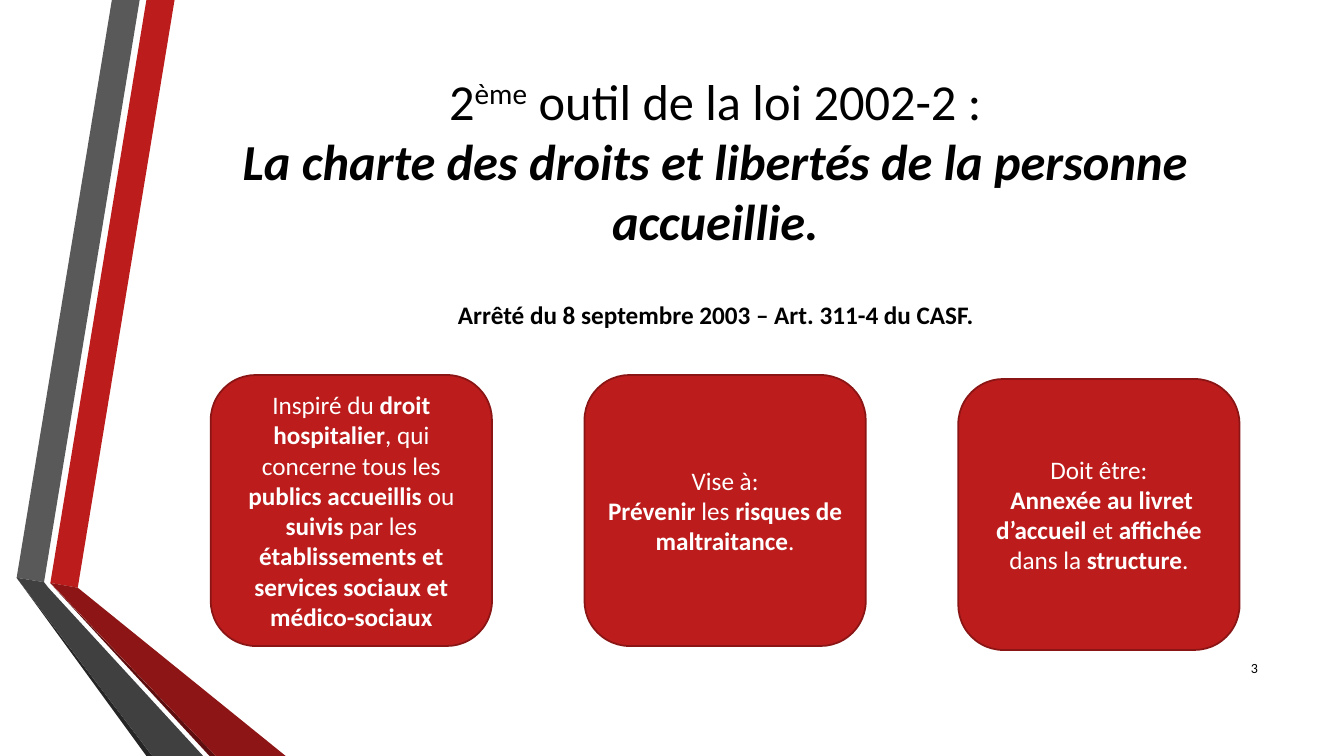
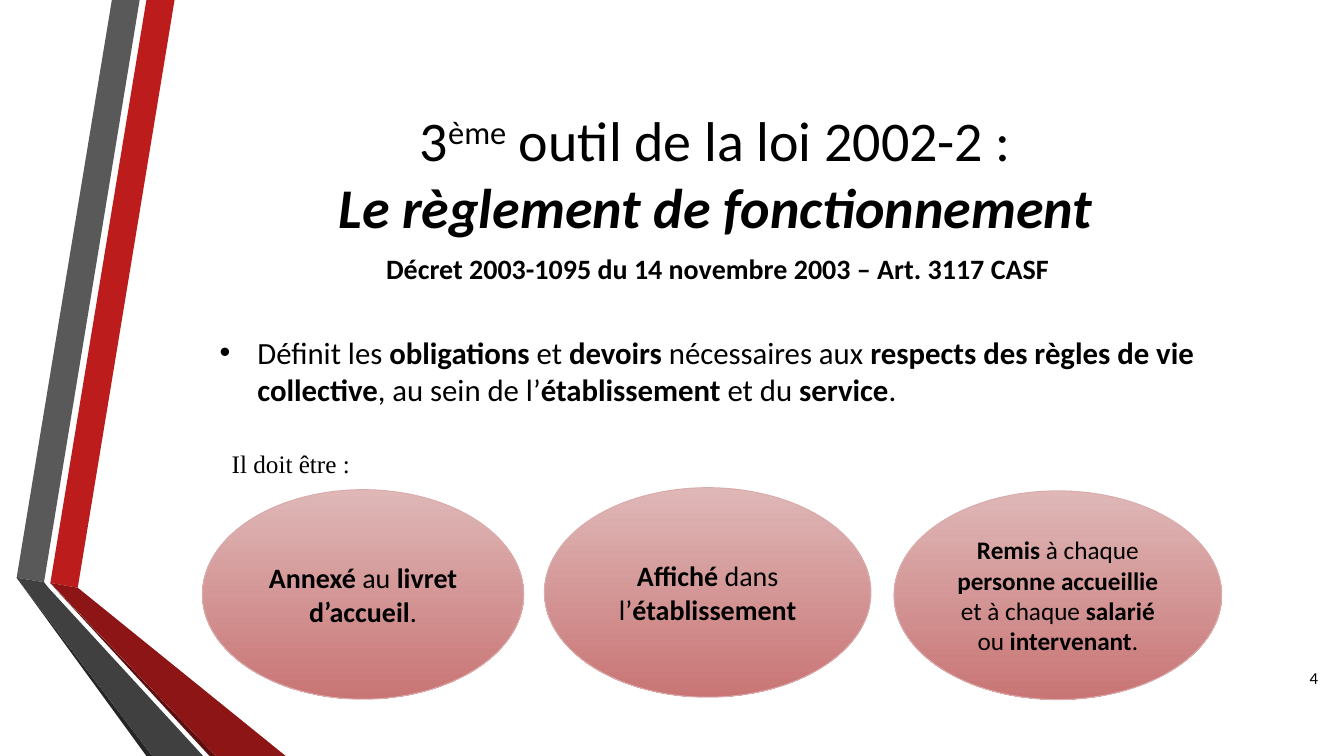
from dataclasses import dataclass

from pptx import Presentation
from pptx.dml import color
from pptx.enum import shapes, text
from pptx.util import Cm, Pt

COLORS = {
    "red": "BC1C1C", "red_edge": "8B1515", "red_dark": "8D1515", "red_deep": "5E0E0E",
    "gray": "595959", "gray_dark": "404040", "gray_deep": "262626",
    "pink_top": "DFB7B7", "pink_bottom": "C97575", "pink_edge": "DAACAC",
    "black": "000000", "white": "FFFFFF",
}
ALIGN = text.PP_ALIGN
ANCHOR = text.MSO_ANCHOR


@dataclass(frozen=True)
class Box:
    left: float
    top: float
    width: float
    height: float

    def lengths(self) -> tuple:
        return Cm(self.left), Cm(self.top), Cm(self.width), Cm(self.height)


@dataclass(frozen=True)
class Style:
    size: float
    color: str = "black"
    font: str = "Calibri"
    align: ALIGN = ALIGN.CENTER
    anchor: ANCHOR = ANCHOR.MIDDLE
    italic_bold: bool = False


@dataclass(frozen=True)
class Look:
    kind: shapes.MSO_SHAPE
    fills: tuple
    edge: str
    edge_width: float


@dataclass(frozen=True)
class Band:
    color: str
    points: tuple


BANDS = (
    Band("red", ((1.27, 14.69), (1.96, 14.81), (4.4, 0), (3.69, 0))),
    Band("gray", ((3.52, 0), (2.82, 0), (0.42, 14.56), (1.11, 14.67))),
    Band("gray_deep", ((0.42, 14.56), (3.69, 19.05), (3.84, 19.05))),
    Band("red_deep", ((1.27, 14.7), (5.28, 19.05), (5.44, 19.05))),
    Band("red_dark", ((1.27, 14.69), (5.44, 19.05), (7.2, 19.05), (1.96, 14.81))),
    Band("gray_dark", ((5.12, 19.05), (1.22, 14.81), (1.11, 14.67), (0.42, 14.56), (3.84, 19.05))),
)
CARD = Look(shapes.MSO_SHAPE.ROUNDED_RECTANGLE, ("red",), "red_edge", 1.25)
OVAL = Look(shapes.MSO_SHAPE.OVAL, ("pink_top", "pink_bottom"), "pink_edge", 0.75)

CARDS = (
    (9.45, "Inspiré du *droit hospitalier*, qui concerne tous les *publics accueillis *ou "
           "*suivis* par les *établissements et services sociaux et médico-sociaux*"),
    (9.45, "Vise à:\n*Prévenir *les* risques de maltraitance*."),
    (9.55, "Doit être:\n* Annexée au livret d’accueil *et *affichée* dans la *structure*."),
)
OVALS = (
    (Box(5.1, 12.34, 8.1, 5.28), 20, "*Annexé *au *livret d’accueil*."),
    (Box(13.72, 12.29, 8.23, 5.28), 20, "*Affiché *dans l’*établissement*"),
    (Box(22.53, 12.37, 8.26, 5.26), 18,
     "*Remis* à chaque* personne accueillie* et à chaque *salarié *ou* intervenant*."),
)


def rgb(name: str) -> color.RGBColor:
    return color.RGBColor.from_string(COLORS[name])


def write_line(p, line: str, style: Style) -> None:
    for i, part in enumerate(line.split("*")):
        for j, piece in enumerate(part.split("^")):
            if not piece:
                continue
            r = p.add_run()
            r.text = piece
            bold = i % 2 == 1
            formats = {"name": style.font, "size": Pt(style.size), "bold": bold,
                       "italic": bold and style.italic_bold}
            for key, value in formats.items():
                setattr(r.font, key, value)
            r.font.color.rgb = rgb(style.color)
            if j % 2:
                r._r.get_or_add_rPr().set("baseline", "30000")


def write(tf, content: str, style: Style) -> None:
    formats = {"word_wrap": True, "auto_size": text.MSO_AUTO_SIZE.NONE,
               "vertical_anchor": style.anchor}
    for key, value in formats.items():
        setattr(tf, key, value)
    for i, paragraph in enumerate(content.split("\n")):
        p = tf.add_paragraph() if i else tf.paragraphs[0]
        p.alignment = style.align
        p.space_before = Pt(0)
        for j, line in enumerate(paragraph.split("\v")):
            if j:
                p.add_line_break()
            write_line(p, line, style)


def fill_placeholder(sp, box: Box, content: str, style: Style) -> None:
    for key, value in zip(("left", "top", "width", "height"), box.lengths()):
        setattr(sp, key, value)
    write(sp.text_frame, content, style)


def add_text(s, box: Box, content: str, style: Style) -> None:
    write(s.shapes.add_textbox(*box.lengths()).text_frame, content, style)


def add_figure(s, look: Look, box: Box, content: str, style: Style) -> None:
    sp = s.shapes.add_shape(look.kind, *box.lengths())
    sp.shadow.inherit = False
    if len(look.fills) == 1:
        sp.fill.solid()
        sp.fill.fore_color.rgb = rgb(look.fills[0])
    else:
        sp.fill.gradient()
        sp.fill.gradient_angle = 270
        for position, (stop, name) in enumerate(zip(sp.fill.gradient_stops, look.fills)):
            stop.position = position
            stop.color.rgb = rgb(name)
    sp.line.color.rgb = rgb(look.edge)
    sp.line.width = Pt(look.edge_width)
    write(sp.text_frame, content, style)


def add_bands(prs, s) -> None:
    for band in BANDS:
        points = [(Cm(x), Cm(y)) for x, y in band.points]
        builder = s.shapes.build_freeform(*points[0])
        builder.add_line_segments(points[1:], close=True)
        sp = builder.convert_to_shape()
        sp.shadow.inherit = False
        sp.fill.solid()
        sp.fill.fore_color.rgb = rgb(band.color)
        sp.line.fill.background()
        prs.slide_master.shapes.element.append(sp.element)


def add_slide(prs, layout: int, title: str, top: float, size: float):
    s = prs.slides.add_slide(prs.slide_layouts[layout])
    fill_placeholder(s.shapes.title, Box(4.11, top, 27.84, 4.88), title,
                     Style(size, italic_bold=True))
    return s


def add_number(s, number: str, left: float, top: float, size: float) -> None:
    add_text(s, Box(left, top, 1.52, 1.02), number, Style(size, align=ALIGN.RIGHT))


def build_charter(prs):
    s = add_slide(prs, 5, "2^ème^ outil de la loi 2002-2 :\v"
                  "*La charte des droits et libertés de la personne accueillie.*", 1.6, 36)
    add_number(s, "3", 30.43, 16.31, 10)
    for i, (top, content) in enumerate(CARDS):
        add_figure(s, CARD, Box(5.31 + i * 9.42, top, 7.09, 6.83), content, Style(18, "white"))
    add_text(s, Box(10.49, 7.42, 15.11, 1.03),
             "*Arrêté du 8 septembre 2003 – Art. 311-4 du CASF.*", Style(18, anchor=ANCHOR.TOP))
    return s


def build_rules(prs):
    s = add_slide(prs, 1, "3^ème^ outil de la loi 2002-2 :\v"
                  "*Le règlement de fonctionnement*", 1.9, 40)
    add_text(s, Box(4.83, 6.22, 26.52, 1.11),
             "*Décret 2003-1095 du 14 novembre 2003 – Art. 3117 CASF*",
             Style(20, anchor=ANCHOR.TOP))
    fill_placeholder(s.placeholders[1], Box(5.28, 8.28, 25.17, 2.13),
                     "Définit les *obligations* et *devoirs* nécessaires aux *respects des règles "
                     "de vie collective*, au sein de l’*établissement *et du *service*.",
                     Style(22, align=ALIGN.LEFT, anchor=ANCHOR.TOP))
    for box, size, content in OVALS:
        add_figure(s, OVAL, box, content, Style(size))
    add_text(s, Box(5.59, 11.18, 4.42, 1.07), "Il doit être :",
             Style(18, font="Times New Roman", align=ALIGN.JUSTIFY, anchor=ANCHOR.TOP))
    add_number(s, "4", 31.95, 16.56, 12)
    return s


def main() -> None:
    prs = Presentation()
    prs.slide_width, prs.slide_height = Cm(33.87), Cm(19.05)
    add_bands(prs, build_charter(prs))
    build_rules(prs)
    prs.save("out.pptx")


if __name__ == "__main__":
    main()
